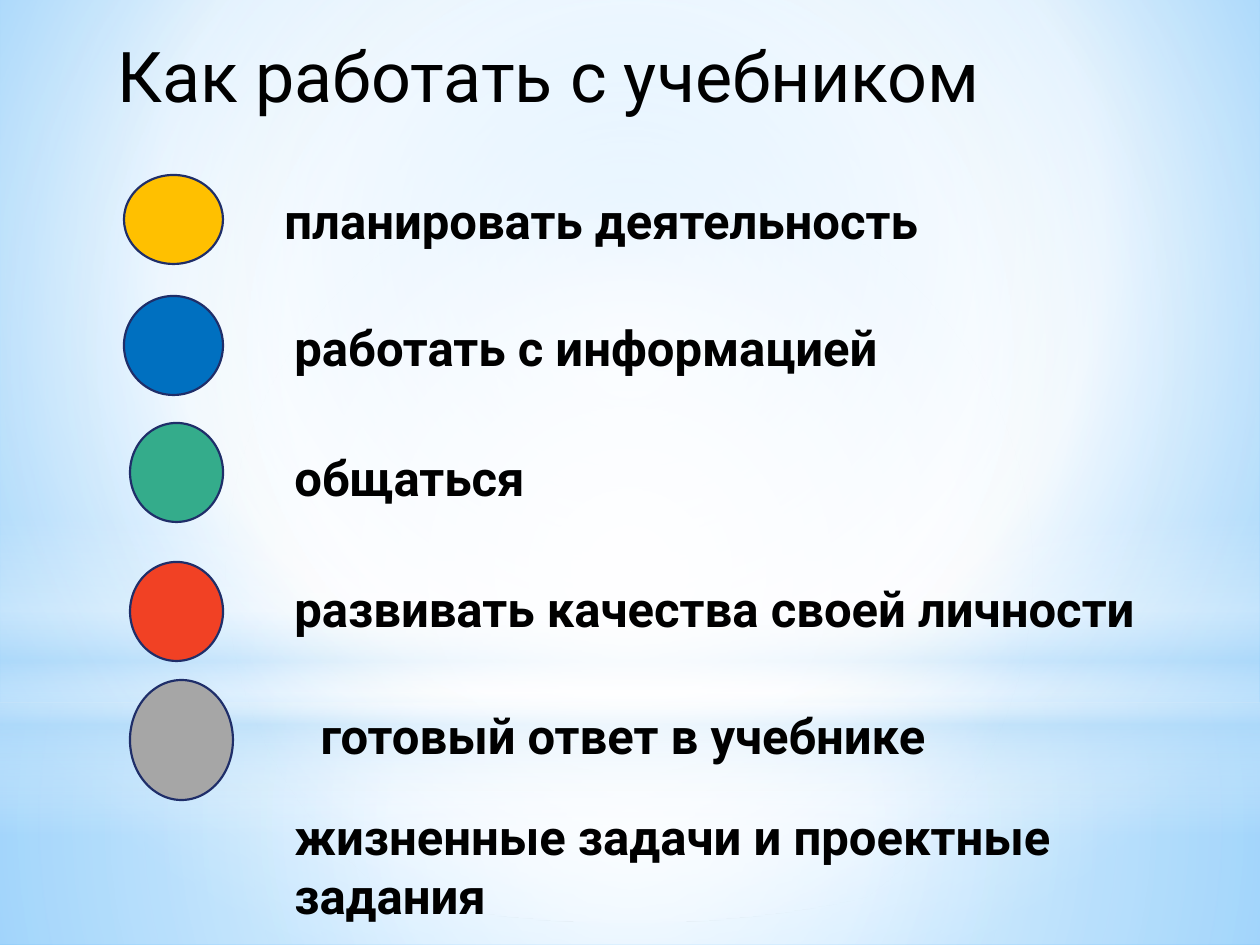
from lxml import etree
from pptx import Presentation
from pptx.dml.color import RGBColor
from pptx.enum.shapes import MSO_SHAPE
from pptx.enum.text import MSO_AUTO_SIZE, PP_ALIGN
from pptx.oxml.ns import qn
from pptx.util import Pt

RECTANGLE = MSO_SHAPE.RECTANGLE
OVAL = MSO_SHAPE.OVAL
FIT_SHAPE = MSO_AUTO_SIZE.SHAPE_TO_FIT_TEXT
LEFT = PP_ALIGN.LEFT
CENTER = PP_ALIGN.CENTER
EMU_PER_PX = 914400 // 126
WIDTH, HEIGHT = 1260, 945
HORIZON = 703
MIDDLE = (50, 50, 50, 50)


class Theme:
    font = "Roboto"
    text = "000000"
    outline = "1F2E69"
    yellow = "FFC000"
    blue = "0070C0"
    green = "34AC8B"
    red = "F14124"
    gray = "A6A6A6"
    white = "FFFFFF"
    haze = "B4DCFA"
    sky = "9ED5FF"
    deep_sky = "5BB9FF"
    title_size = 40
    body_size = 28
    outline_width = 1.25


class SlideBuilder:
    def __init__(self, slide, theme):
        self.slide = slide
        self.theme = theme

    def px(self, *lengths):
        return [length * EMU_PER_PX for length in lengths]

    def gradient(self, owner, fill, stops, center=None):
        fill.gradient()
        placeholder = owner.xpath(".//a:gradFill")[0]
        gradient = etree.Element(qn("a:gradFill"), rotWithShape="1")
        stop_list = etree.SubElement(gradient, qn("a:gsLst"))
        for position, color, opacity in stops:
            stop = etree.SubElement(stop_list, qn("a:gs"), pos=str(position * 1000))
            value = etree.SubElement(stop, qn("a:srgbClr"), val=color)
            if opacity < 100:
                etree.SubElement(value, qn("a:alpha"), val=str(opacity * 1000))
        if center:
            circle = etree.SubElement(gradient, qn("a:path"), path="circle")
            sides = {side: str(share * 1000) for side, share in zip("ltrb", center)}
            etree.SubElement(circle, qn("a:fillToRect"), **sides)
        else:
            etree.SubElement(gradient, qn("a:lin"), ang="5400000", scaled="0")
        placeholder.getparent().replace(placeholder, gradient)

    def background(self, stops, center):
        self.gradient(self.slide.element, self.slide.background.fill, stops, center)

    def shape(self, kind, box):
        shape = self.slide.shapes.add_shape(kind, *self.px(*box))
        shape.shadow.inherit = False
        return shape

    def glow(self, kind, box, stops, center=None):
        shape = self.shape(kind, box)
        shape.line.fill.background()
        self.gradient(shape.element, shape.fill, stops, center)

    def marker(self, box, color):
        shape = self.shape(OVAL, box)
        shape.fill.solid()
        shape.fill.fore_color.rgb = RGBColor.from_string(color)
        shape.line.color.rgb = RGBColor.from_string(self.theme.outline)
        shape.line.width = Pt(self.theme.outline_width)

    def text(self, box, wording, size, bold=False, alignment=LEFT):
        frame = self.slide.shapes.add_textbox(*self.px(*box)).text_frame
        frame.word_wrap = True
        frame.auto_size = FIT_SHAPE
        paragraph = frame.paragraphs[0]
        paragraph.text = wording
        paragraph.alignment = alignment
        paragraph.font.name = self.theme.font
        paragraph.font.size = Pt(size)
        paragraph.font.bold = bold
        paragraph.font.color.rgb = RGBColor.from_string(self.theme.text)


def draw_backdrop(builder, theme):
    white, haze = theme.white, theme.haze
    builder.background(
        [(0, theme.sky, 100), (60, white, 100), (100, theme.deep_sky, 100)],
        (20, 10, 20, 60),
    )
    builder.glow(RECTANGLE, (0, HORIZON, WIDTH, HEIGHT - HORIZON),
                 [(0, white, 91), (37, white, 76), (100, haze, 79)], MIDDLE)
    builder.glow(RECTANGLE, (0, 0, WIDTH, HORIZON),
                 [(0, white, 89), (48, white, 62), (100, haze, 79)], MIDDLE)
    builder.glow(RECTANGLE, (0, 519, WIDTH, 315),
                 [(0, white, 0), (29, white, 30), (45, haze, 40),
                  (55, white, 26), (65, haze, 60), (100, white, 0)])
    builder.glow(OVAL, (0, 220, WIDTH, HORIZON),
                 [(0, white, 100), (56, white, 0)], MIDDLE)


def main():
    presentation = Presentation()
    presentation.slide_width = WIDTH * EMU_PER_PX
    presentation.slide_height = HEIGHT * EMU_PER_PX
    theme = Theme()
    slide = presentation.slides.add_slide(presentation.slide_layouts[6])
    builder = SlideBuilder(slide, theme)
    draw_backdrop(builder, theme)

    builder.text((105, 26, 1022, 97), "Как работать с учебником", theme.title_size)
    skills = [
        ((124, 175, 99, 89), theme.yellow,
         (272, 184, 804, 72), "планировать деятельность", LEFT),
        ((124, 296, 99, 99), theme.blue,
         (282, 311, 694, 72), "работать с информацией", LEFT),
        ((130, 423, 93, 99), theme.green,
         (282, 441, 625, 72), "общаться", LEFT),
        ((130, 562, 93, 99), theme.red,
         (282, 572, 970, 72), "развивать качества своей личности", LEFT),
        ((130, 680, 103, 120), theme.gray,
         (282, 699, 682, 72), "готовый ответ в учебнике", CENTER),
    ]
    for marker_box, color, text_box, wording, alignment in skills:
        builder.marker(marker_box, color)
        builder.text(text_box, wording, theme.body_size, True, alignment)
    builder.text((282, 800, 912, 131), "жизненные задачи и проектные задания",
                 theme.body_size, True)
    presentation.save("out.pptx")


if __name__ == "__main__":
    main()
